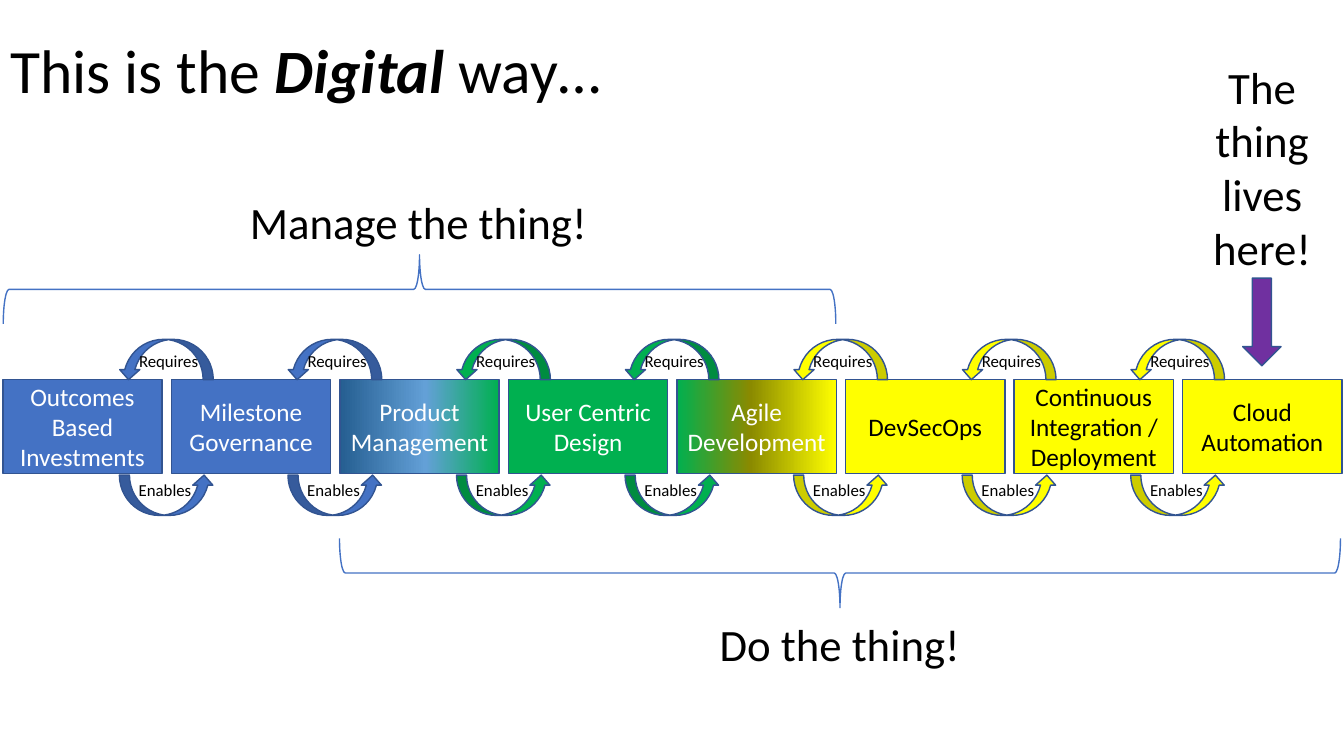
from copy import deepcopy

from pptx import Presentation
from pptx.dml.color import RGBColor
from pptx.enum.shapes import MSO_SHAPE
from pptx.enum.text import MSO_ANCHOR, MSO_AUTO_SIZE, PP_ALIGN
from pptx.oxml.ns import qn
from pptx.util import Pt

RECTANGLE = MSO_SHAPE.RECTANGLE
BRACE = MSO_SHAPE.RIGHT_BRACE
CURVED_ARROW = MSO_SHAPE.CURVED_UP_ARROW
DOWN_ARROW = MSO_SHAPE.DOWN_ARROW
LEFT, CENTER = PP_ALIGN.LEFT, PP_ALIGN.CENTER
MIDDLE = MSO_ANCHOR.MIDDLE
FIT_SHAPE = MSO_AUTO_SIZE.SHAPE_TO_FIT_TEXT

BLACK = RGBColor(0x00, 0x00, 0x00)
WHITE = RGBColor(0xFF, 0xFF, 0xFF)
BLUE = RGBColor(0x44, 0x72, 0xC4)
OUTLINE = RGBColor(0x32, 0x54, 0x91)
GREEN = RGBColor(0x00, 0xB0, 0x50)
YELLOW = RGBColor(0xFF, 0xFF, 0x00)
PURPLE = RGBColor(0x70, 0x30, 0xA0)
DEEP_BLUE = RGBColor(0x25, 0x5E, 0x91)
SKY_BLUE = RGBColor(0x63, 0xA0, 0xD7)
OLIVE = RGBColor(0x8A, 0x8A, 0x00)

FONT = "Calibri"
STEP = 120.4

presentation = Presentation()
presentation.slide_width, presentation.slide_height = Pt(960), Pt(540)
slide = presentation.slides.add_slide(presentation.slide_layouts[5])


def add_outlined(kind, left, top, width, height, fill=None, line=OUTLINE, rotation=0):
    shape = slide.shapes.add_shape(kind, Pt(left), Pt(top), Pt(width), Pt(height))
    shape.shadow.inherit = False
    shape.rotation = rotation
    if fill is None:
        shape.fill.background()
    else:
        shape.fill.solid()
        shape.fill.fore_color.rgb = fill
    shape.line.color.rgb = line
    shape.line.width = Pt(1)
    return shape


def add_label(text, left, top, width, height, size, wrap=False, alignment=LEFT):
    box = slide.shapes.add_textbox(Pt(left), Pt(top), Pt(width), Pt(height))
    box.text_frame.word_wrap = wrap
    box.text_frame.auto_size = FIT_SHAPE
    paragraph = box.text_frame.paragraphs[0]
    paragraph.alignment = alignment
    run = paragraph.add_run()
    run.text = text
    run.font.name, run.font.size = FONT, Pt(size)
    run.font.color.rgb = BLACK


# Title
title = slide.shapes.title
title.left, title.top, title.width, title.height = Pt(0), Pt(0), Pt(960), Pt(104.4)
title.text_frame.vertical_anchor = MIDDLE
paragraph = title.text_frame.paragraphs[0]
paragraph.alignment = LEFT
paragraph.line_spacing = 0.9
for text, emphasis in [("This is the ", False), ("Digital", True), (" way…", False)]:
    run = paragraph.add_run()
    run.text = text
    run.font.name, run.font.size = FONT, Pt(44)
    run.font.bold = run.font.italic = emphasis
    run.font.color.rgb = BLACK

# Practices, from investment to automation; three colours make a gradient
practices = [
    (["Outcomes", "Based Investments"], [BLUE], WHITE),
    (["Milestone Governance"], [BLUE], WHITE),
    (["Product Management"], [DEEP_BLUE, SKY_BLUE, GREEN], WHITE),
    (["User Centric", "Design"], [GREEN], WHITE),
    (["Agile Development"], [GREEN, OLIVE, YELLOW], WHITE),
    (["DevSecOps"], [YELLOW], BLACK),
    (["Continuous Integration / Deployment"], [YELLOW], BLACK),
    (["Cloud Automation"], [YELLOW], BLACK),
]
middle_stops = {SKY_BLUE: 0.54, OLIVE: 0.46}
for index, (lines, colors, text_color) in enumerate(practices):
    box = add_outlined(RECTANGLE, 2 + index * STEP, 271.2, 113.8, 67, colors[0])
    if len(colors) == 3:
        box.fill.gradient()
        box.fill.gradient_angle = 0
        stop_list = box.element.find(".//" + qn("a:gsLst"))
        stop_list.insert(1, deepcopy(stop_list[0]))
        positions = [0, middle_stops[colors[1]], 1]
        for stop, color, position in zip(box.fill.gradient_stops, colors, positions):
            stop.color.rgb = color
            stop.position = position
    frame = box.text_frame
    frame.word_wrap = True
    frame.vertical_anchor = MIDDLE
    for number, line in enumerate(lines):
        paragraph = frame.add_paragraph() if number else frame.paragraphs[0]
        paragraph.alignment = CENTER
        run = paragraph.add_run()
        run.text = line
        run.font.name, run.font.size = FONT, Pt(18)
        run.font.color.rgb = text_color

# Braces and their captions
add_outlined(BRACE, 575.3, 51.8, 49.4, 715, line=BLUE, rotation=90)
add_outlined(BRACE, 275, -90.7, 49.4, 594.7, line=BLUE, rotation=270)
add_label("Manage the thing!", 171.4, 135.4, 257.8, 46, 32)
add_label("Do the thing!", 506.9, 437, 187.9, 46, 32)

# Links between neighbouring practices
link_colors = [BLUE, BLUE, GREEN, GREEN, YELLOW, YELLOW, YELLOW]
for index, color in enumerate(link_colors):
    offset = index * STEP
    add_outlined(CURVED_ARROW, 85.3 + offset, 339.4, 67.7, 28.8, color)
    add_outlined(CURVED_ARROW, 84.6 + offset, 242.4, 67.7, 28.8, color, rotation=180)
    add_label("Enables", 92 + offset, 338.8, 52.6, 21.6, 12)
    add_label("Requires", 92.2 + offset, 247.2, 56.9, 21.6, 12)

# Where the thing lives
add_label("The thing lives here!", 841, 38.9, 121, 162.7, 32, wrap=True, alignment=CENTER)
add_outlined(DOWN_ARROW, 887.6, 198.7, 27.4, 62.6, PURPLE)

presentation.save("out.pptx")
